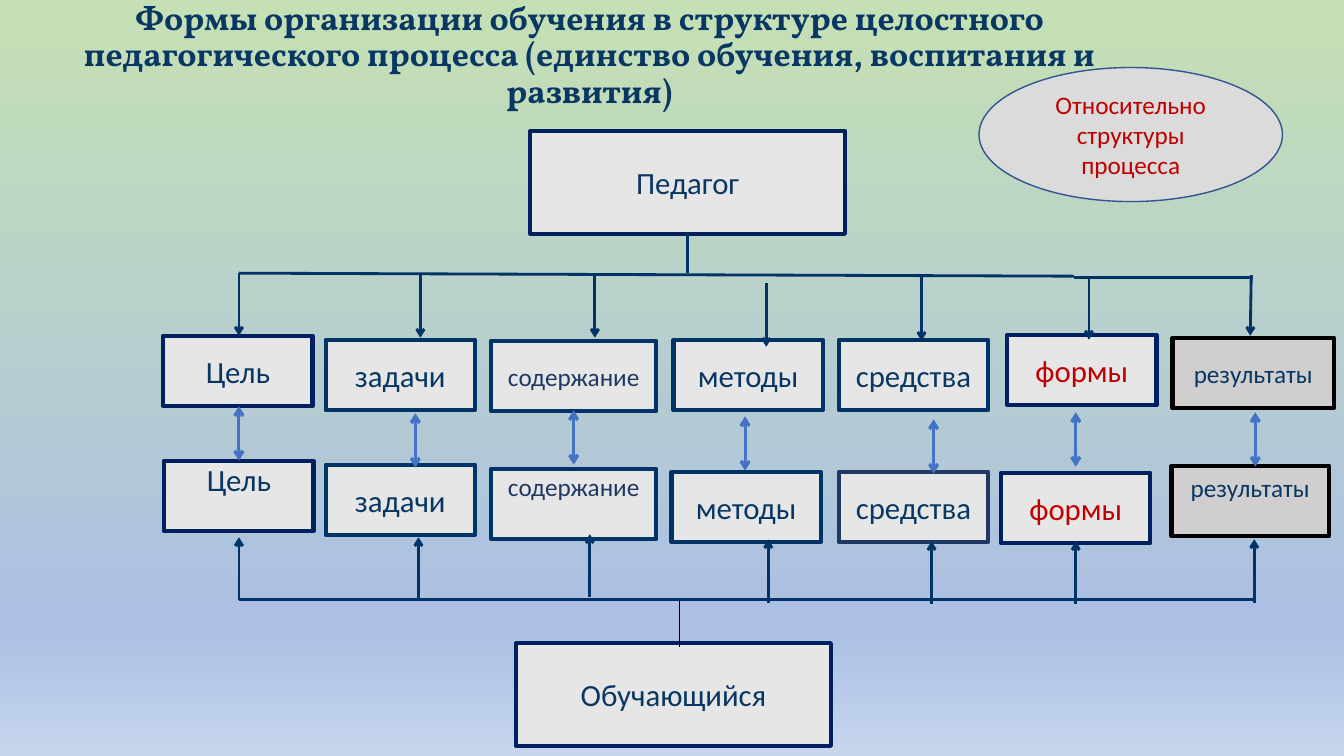
from copy import deepcopy

from pptx import Presentation
from pptx.dml.color import RGBColor
from pptx.enum.shapes import MSO_CONNECTOR, MSO_SHAPE
from pptx.enum.text import MSO_ANCHOR, PP_ALIGN
from pptx.oxml.ns import qn
from pptx.util import Inches, Pt
from lxml import etree

RECT, OVAL = MSO_SHAPE.RECTANGLE, MSO_SHAPE.OVAL
STRAIGHT = MSO_CONNECTOR.STRAIGHT
CENTER = PP_ALIGN.CENTER
TOP, MIDDLE = MSO_ANCHOR.TOP, MSO_ANCHOR.MIDDLE

NAVY, TEAL, INK, SLATE = "002060", "003366", "083763", "203864"
RED, BLUE, BLACK, PALE, GREY = "C00000", "4472C4", "000000", "E7E6E6", "D0CECE"
BOX_H = 0.7

TITLE = ("Формы организации обучения в структуре целостного педагогического "
         "процесса (единство обучения, воспитания и развития)")
BACKGROUND = [(0, "C5E0B4"), (0.83, "ABC0E4"), (1, "C7D5ED")]

ACTORS = [
    ("Педагог", 5.26, 1.3),
    ("Обучающийся", 5.12, 6.38),
]
STAGES = [
    {"text": "Цель", "size": 22, "color": INK, "fill": PALE,
     "boxes": [(1.62, 3.33, 1.48, NAVY, None), (1.63, 4.57, 1.48, NAVY, 0)],
     "down": (2.37, 2.71, 2.37, 3.33), "up": (2.37, 5.95, 5.33), "link": (2.37, 4.03)},
    {"text": "задачи", "size": 22, "color": INK, "fill": PALE,
     "boxes": [(3.23, 3.37, 1.48, TEAL, None), (3.23, 4.61, 1.48, TEAL, None)],
     "down": (4.17, 2.72, 4.17, 3.35), "up": (4.15, 5.95, 5.33), "link": (4.12, 4.1)},
    {"text": "содержание", "size": 18, "color": SLATE, "fill": PALE,
     "boxes": [(4.87, 3.38, 1.64, TEAL, None), (4.87, 4.65, 1.64, TEAL, 0.03)],
     "down": (5.9, 2.72, 5.9, 3.35), "up": (5.85, 5.92, 5.3), "link": (5.69, 4.07)},
    {"text": "методы", "size": 22, "color": INK, "fill": PALE,
     "boxes": [(6.68, 3.37, 1.48, TEAL, None), (6.66, 4.68, 1.48, TEAL, None)],
     "down": (7.6, 2.81, 7.6, 3.44), "up": (7.62, 5.98, 5.35), "link": (7.39, 4.13)},
    {"text": "средства", "size": 22, "color": INK, "fill": PALE,
     "boxes": [(8.32, 3.37, 1.48, TEAL, None), (8.32, 4.68, 1.48, SLATE, None)],
     "down": (9.14, 2.75, 9.14, 3.38), "up": (9.24, 5.99, 5.37), "link": (9.26, 4.16)},
    {"text": "формы", "size": 22, "color": RED, "fill": PALE,
     "boxes": [(9.99, 3.32, 1.48, NAVY, None), (9.93, 4.69, 1.48, NAVY, None)],
     "down": (10.8, 2.74, 10.8, 3.37), "up": (10.67, 5.99, 5.37), "link": (10.67, 4.09)},
    {"text": "результаты", "size": 18, "color": INK, "fill": GREY,
     "boxes": [(11.63, 3.35, 1.6, BLACK, None), (11.62, 4.62, 1.56, BLACK, 0.07)],
     "down": (12.41, 2.73, 12.4, 3.33), "up": (12.44, 5.98, 5.35), "link": (12.45, 4.09)},
]
RAILS = [
    (2.37, 2.71, 10.65, 2.74, TEAL, 2),
    (10.65, 2.75, 12.43, 2.75, TEAL, 2),
    (6.82, 2.32, 6.82, 2.71, TEAL, 2),
    (2.37, 5.95, 12.43, 5.95, TEAL, 2),
    (6.74, 6.42, 6.74, 5.95, BLACK, 1),
]


def rgb(value):
    return RGBColor.from_string(value)


def write(sp, text, size, color, font="Calibri", bold=False, anchor=MIDDLE):
    tf = sp.text_frame
    tf.word_wrap = True
    tf.vertical_anchor = anchor
    p = tf.paragraphs[0]
    p.alignment = CENTER
    r = p.add_run()
    r.text = text
    for name, value in {"size": Pt(size), "name": font, "bold": bold}.items():
        setattr(r.font, name, value)
    r.font.color.rgb = rgb(color)
    return p


def add_box(slide, kind, text, x, y, w, h, size, color, fill, line, weight=3, top=None):
    sp = slide.shapes.add_shape(kind, Inches(x), Inches(y), Inches(w), Inches(h))
    sp.shadow.inherit = False
    sp.fill.solid()
    sp.fill.fore_color.rgb = rgb(fill)
    sp.line.color.rgb = rgb(line)
    sp.line.width = Pt(weight)
    write(sp, text, size, color, anchor=MIDDLE if top is None else TOP)
    if top is not None:
        sp.text_frame.margin_top = Inches(top)


def add_line(slide, x1, y1, x2, y2, color, weight, ends=()):
    cn = slide.shapes.add_connector(STRAIGHT, Inches(x1), Inches(y1), Inches(x2), Inches(y2))
    cn.line.color.rgb = rgb(color)
    cn.line.width = Pt(weight)
    ln = cn.line._get_or_add_ln()
    for end in ends:
        etree.SubElement(ln, qn(f"a:{end}"), type="arrow")
    etree.SubElement(cn.element.spPr, qn("a:effectLst"))


def paint_background(slide):
    fill = slide.background.fill
    fill.gradient()
    fill.gradient_angle = 270
    stop_list = next(slide.element.iter(qn("a:gsLst")))
    stop_list.append(deepcopy(stop_list[0]))
    for stop, (position, color) in zip(fill.gradient_stops, BACKGROUND):
        stop.position = position
        stop.color.rgb = rgb(color)


def add_title(slide):
    sp = slide.shapes.title
    place = {"left": 0.17, "top": -0.1, "width": 11.35, "height": 1.31}
    for name, value in place.items():
        setattr(sp, name, Inches(value))
    write(sp, TITLE, 24, INK, "Vollkorn", True).line_spacing = 0.9


def main():
    prs = Presentation()
    prs.slide_width, prs.slide_height = Inches(13.33), Inches(7.5)
    slide = prs.slides.add_slide(prs.slide_layouts[5])
    paint_background(slide)
    add_title(slide)

    for text, x, y in ACTORS:
        add_box(slide, RECT, text, x, y, 3.12, 1.02, 22, INK, PALE, NAVY)
    add_box(slide, OVAL, "Относительно структуры процесса",
            9.71, 0.67, 3.01, 1.33, 18, RED, "DBDBDB", "325491", 1)
    for stage in STAGES:
        for x, y, w, line, top in stage["boxes"]:
            add_box(slide, RECT, stage["text"], x, y, w, BOX_H, stage["size"],
                    stage["color"], stage["fill"], line, top=top)

    for rail in RAILS:
        add_line(slide, *rail)
    for stage in STAGES:
        add_line(slide, *stage["down"], TEAL, 2, ["tailEnd"])
        x, start, end = stage["up"]
        add_line(slide, x, start, x, end, TEAL, 2, ["tailEnd"])
        x, y = stage["link"]
        add_line(slide, x, y, x, y + 0.54, BLUE, 2.25, ["headEnd", "tailEnd"])

    prs.save("out.pptx")


if __name__ == "__main__":
    main()
